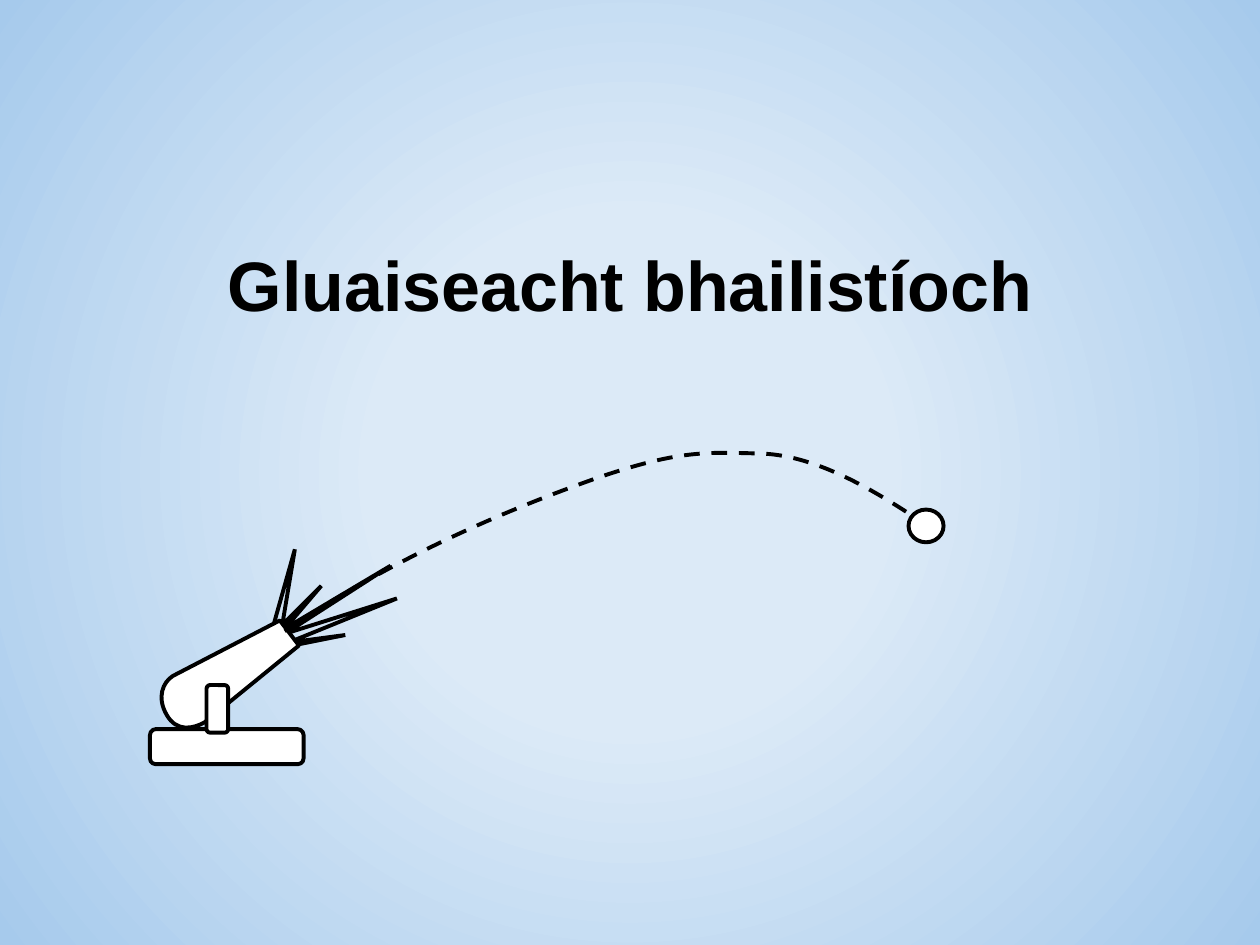
"""Builds a title slide with a cannon firing a ball along a dashed arc."""
from pptx import Presentation, util as u
from pptx.dml.color import RGBColor
from pptx.enum import dml, shapes, text
from pptx.oxml import parse_xml
from pptx.oxml.ns import nsdecls, qn

Pt = u.Pt
BLACK, WHITE = "000000", "FFFFFF"


def color(value):
    return RGBColor.from_string(value)


def set_background(s, stops):
    fill = s.background.fill
    fill.gradient()
    for stop, (position, value) in zip(fill.gradient_stops, stops):
        stop.position = position
        stop.color.rgb = color(value)
    lin = next(s.element.iter(qn("a:lin")))
    radial = parse_xml(
        f'<a:path {nsdecls("a")} path="circle">'
        '<a:fillToRect l="50000" t="50000" r="50000" b="50000"/></a:path>')
    lin.getparent().replace(lin, radial)


def add_title(s, left, top, width, height, words):
    tf = s.shapes.add_textbox(Pt(left), Pt(top), Pt(width), Pt(height)).text_frame
    tf.word_wrap = True
    tf.vertical_anchor = text.MSO_ANCHOR.TOP
    p = tf.paragraphs[0]
    p.text = words
    p.alignment = text.PP_ALIGN.CENTER
    p.line_spacing = 0.9
    p.font.name, p.font.size, p.font.bold = "Arial", Pt(40), True
    p.font.color.rgb = color(BLACK)


def style(sp, fill=WHITE, dash=None):
    sp.shadow.inherit = False
    if fill:
        sp.fill.solid()
        sp.fill.fore_color.rgb = color(fill)
    else:
        sp.fill.background()
    sp.line.color.rgb = color(BLACK)
    sp.line.width = Pt(2.25)
    if dash:
        sp.line.dash_style = dash


def add_preset(s, kind, left, top, width, height):
    style(s.shapes.add_shape(kind, Pt(left), Pt(top), Pt(width), Pt(height)))


def add_outline(s, points, curves=0, closed=False, **look):
    """Draw an outline whose first curves are Beziers of three points each."""
    (x, y), *rest = [(Pt(px), Pt(py)) for px, py in points]
    builder = s.shapes.build_freeform(x, y, 1.0)
    builder.add_line_segments(rest, close=closed)
    sp = builder.convert_to_shape()
    style(sp, **look)
    lines = list(sp.element.iter(qn("a:lnTo")))
    for i in range(0, 3 * curves, 3):
        bezier = parse_xml(f'<a:cubicBezTo {nsdecls("a")}/>')
        lines[i].addprevious(bezier)
        for line in lines[i:i + 3]:
            bezier.append(line[0])
            line.getparent().remove(line)
    return sp


def set_miter(sp):
    ln = next(sp.element.iter(qn("a:ln")))
    ln.append(parse_xml(f'<a:miter {nsdecls("a")} lim="800000"/>'))


def main():
    prs = Presentation()
    prs.slide_width, prs.slide_height = Pt(720), Pt(540)
    s = prs.slides.add_slide(prs.slide_layouts[6])
    set_background(s, [(0.32, "DCEAF7"), (1, "A6CAEC")])
    add_title(s, 49.7, 140, 620.6, 69.8, "Gluaiseacht bhailistíoch")

    flash = [(155.5, 360), (168.5, 313.9), (161.3, 357.1), (183.6, 334.8),
             (162.7, 359.3), (223.2, 323.3), (162.7, 362.2), (226.8, 342),
             (164.9, 367.2), (197.3, 362.9), (168.5, 368.6)]
    set_miter(add_outline(s, flash, fill=None))

    barrel = [(103.2, 368.5),
              (96.4, 368.2), (88.6, 373.2), (87.6, 384.7),
              (86.6, 396.3), (95.5, 399.8), (102.9, 400.6),
              (172.3, 395.2), (171.5, 377.2)]
    add_outline(s, barrel, curves=2, closed=True).rotation = 325.3

    add_preset(s, shapes.MSO_SHAPE.OVAL, 519.2, 291.2, 20, 18.7)
    trajectory = [(162.7, 360.7),
                  (229, 316.1), (295.2, 289.4), (342, 272.9),
                  (388.8, 257), (403.9, 258.5), (434.2, 259.2),
                  (463.7, 259.9), (494.6, 277.2), (522, 295.2)]
    add_outline(s, trajectory, curves=3, fill=None, dash=dml.MSO_LINE.DASH)

    add_preset(s, shapes.MSO_SHAPE.ROUNDED_RECTANGLE, 85.7, 416.7, 87.8, 20)
    add_preset(s, shapes.MSO_SHAPE.ROUNDED_RECTANGLE, 118, 391.5, 12.4, 27.2)
    prs.save("out.pptx")


if __name__ == "__main__":
    main()
